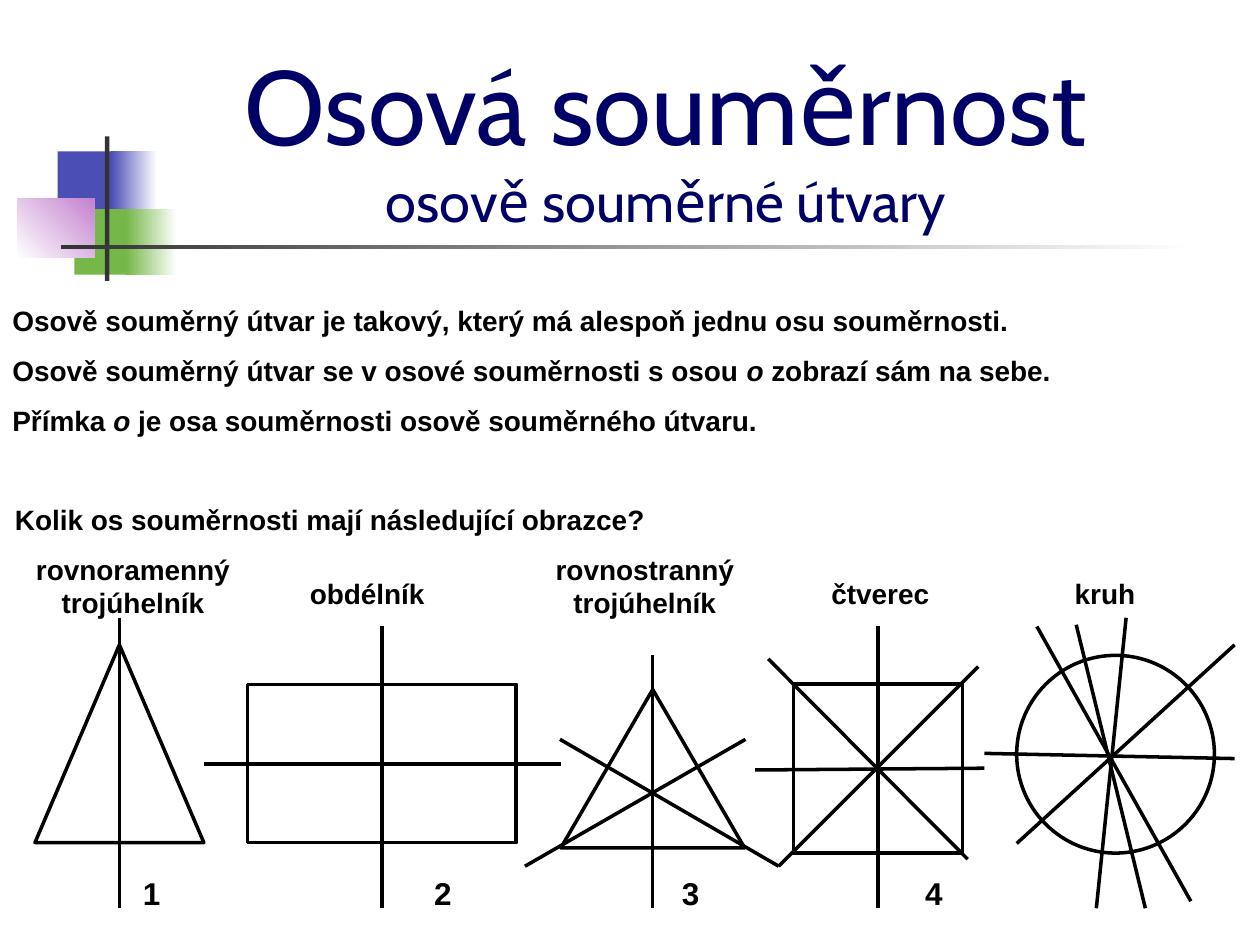
from lxml.etree import SubElement
from pptx import Presentation
from pptx.dml.color import RGBColor
from pptx.enum.shapes import MSO_CONNECTOR, MSO_SHAPE
from pptx.enum.text import MSO_ANCHOR, MSO_AUTO_SIZE, PP_ALIGN
from pptx.oxml.ns import qn
from pptx.util import Pt

BLACK, NAVY, WHITE = "000000", "000066", "FFFFFF"
BLUE, GREEN, PURPLE, GREY = "4B4EB5", "76B749", "C481CF", "333333"

TITLE = [("Osová souměrnost", 60), ("osově souměrné útvary", 32)]
# Each statement is a list of runs; every second run is italic.
STATEMENTS = [
    ["Osově souměrný útvar je takový, který má alespoň jednu osu souměrnosti."],
    ["Osově souměrný útvar se v osové souměrnosti s osou ", "o", " zobrazí sám na sebe."],
    ["Přímka ", "o", " je osa souměrnosti osově souměrného útvaru."],
]
QUESTION = "Kolik os souměrnosti mají následující obrazce?"

# Decoration: left, top, width, height, first colour, last colour, angle
DECOR = [
    (33, 86.5, 35, 37.5, BLUE, BLUE, 0),
    (63.5, 86.5, 26, 37.5, BLUE, WHITE, 0),
    (42.5, 119.5, 33, 37.5, GREEN, GREEN, 0),
    (72, 119.5, 29, 37.5, GREEN, WHITE, 0),
    (10, 113.5, 44, 33.5, WHITE, PURPLE, 45),
    (60, 78, 2.5, 82.5, GREY, GREY, 0),
    (35, 140, 648, 2.5, GREY, WHITE, 0),
]
# Figures: shape, its box, and its axes as x1, y1, x2, y2
FIGURES = [
    (MSO_SHAPE.ISOSCELES_TRIANGLE, (20, 368.5, 96.5, 113), [(68.25, 353, 68.25, 519)]),
    (MSO_SHAPE.RECTANGLE, (141.5, 391, 153.5, 90.5),
     [(218.25, 358, 218.25, 519), (116.5, 436.5, 320.5, 436.5)]),
    (MSO_SHAPE.ISOSCELES_TRIANGLE, (320.5, 394, 105, 90.5),
     [(373, 374.5, 373, 519), (320, 422.5, 445, 495), (426, 422.5, 300, 495)]),
    (MSO_SHAPE.RECTANGLE, (453.5, 391, 96.5, 96.5),
     [(501.75, 358, 501.75, 519), (431.5, 440, 562.5, 439),
      (439, 376.5, 553, 491), (559, 381, 445, 495)]),
    (MSO_SHAPE.OVAL, (581, 374.5, 113, 113),
     [(592.5, 358, 680.5, 515), (643.5, 353, 626.5, 519), (562.5, 430.5, 705.5, 433.5),
      (705.5, 368.5, 581, 482), (615, 357, 654.5, 519)]),
]
# Labels: text, left, top, width, alignment
LABELS = [
    ("rovnoramenný trojúhelník", 13.5, 312, 125, PP_ALIGN.CENTER),
    ("obdélník", 170, 326, 125, PP_ALIGN.LEFT),
    ("rovnostranný trojúhelník", 306, 312, 125, PP_ALIGN.CENTER),
    ("čtverec", 468, 326, 94.5, PP_ALIGN.LEFT),
    ("kruh", 607, 326, 74, PP_ALIGN.LEFT),
]
NUMBER_LEFTS = [74.5, 241, 382.5, 521.5]


def rgb(color):
    return RGBColor.from_string(color)


def add_run(p, text, size=16, font="Arial", color=BLACK, bold=True, italic=False):
    r = p.add_run()
    r.text = text
    f = r.font
    f.size, f.name, f.bold, f.italic = Pt(size), font, bold, italic
    f.color.rgb = rgb(color)


def add_text(s, runs, left, top, width, height=26.5, align=PP_ALIGN.LEFT, size=16):
    """Add a text box whose every second run is italic."""
    tf = s.shapes.add_textbox(Pt(left), Pt(top), Pt(width), Pt(height)).text_frame
    tf.word_wrap = True
    p = tf.paragraphs[0]
    p.alignment = align
    for i, text in enumerate(runs):
        add_run(p, text, size=size, italic=i % 2 == 1)


def add_shape(s, kind, box):
    sp = s.shapes.add_shape(kind, *map(Pt, box))
    sp.shadow.inherit = False
    return sp


def add_decor(s, box, first, last, angle):
    sp = add_shape(s, MSO_SHAPE.RECTANGLE, box)
    sp.line.fill.background()
    if first == last:
        sp.fill.solid()
        sp.fill.fore_color.rgb = rgb(first)
        return
    sp.fill.gradient()
    sp.fill.gradient_angle = angle
    for stop, color in zip(sp.fill.gradient_stops, (first, last)):
        stop.color.rgb = rgb(color)


def set_outline(sp):
    sp.line.color.rgb = rgb(BLACK)
    sp.line.width = Pt(2)


def add_axis(s, ends):
    line = s.shapes.add_connector(MSO_CONNECTOR.STRAIGHT, *map(Pt, ends))
    set_outline(line)
    SubElement(line._element.spPr, qn("a:effectLst"))


def add_title(s):
    title = s.shapes.title
    title.left, title.top, title.width, title.height = map(Pt, (55.5, 21, 650, 115))
    tf = title.text_frame
    tf.auto_size = MSO_AUTO_SIZE.NONE
    tf.vertical_anchor = MSO_ANCHOR.MIDDLE
    for i, (text, size) in enumerate(TITLE):
        p = tf.add_paragraph() if i else tf.paragraphs[0]
        p.alignment = PP_ALIGN.CENTER
        add_run(p, text, size=size, font="Cabin", color=NAVY, bold=False)


def main():
    prs = Presentation()
    prs.slide_width, prs.slide_height = Pt(720), Pt(540)
    s = prs.slides.add_slide(prs.slide_layouts[5])

    for *box, first, last, angle in DECOR:
        add_decor(s, box, first, last, angle)
    add_title(s)

    top, pitch = 170, 28.4
    for i, runs in enumerate(STATEMENTS):
        add_text(s, runs, 0, top + i * pitch, 720)
    add_text(s, [QUESTION], 1.5, top + 4 * pitch, 720)

    for kind, box, axes in FIGURES:
        sp = add_shape(s, kind, box)
        sp.fill.background()
        set_outline(sp)
        for ends in axes:
            add_axis(s, ends)

    for text, left, label_top, width, align in LABELS:
        height = 46 if align == PP_ALIGN.CENTER else 26.5
        add_text(s, [text], left, label_top, width, height, align)
    for number, left in enumerate(NUMBER_LEFTS, 1):
        add_text(s, [str(number)], left, 496, 29, 29, size=18)

    prs.save("out.pptx")


if __name__ == "__main__":
    main()
